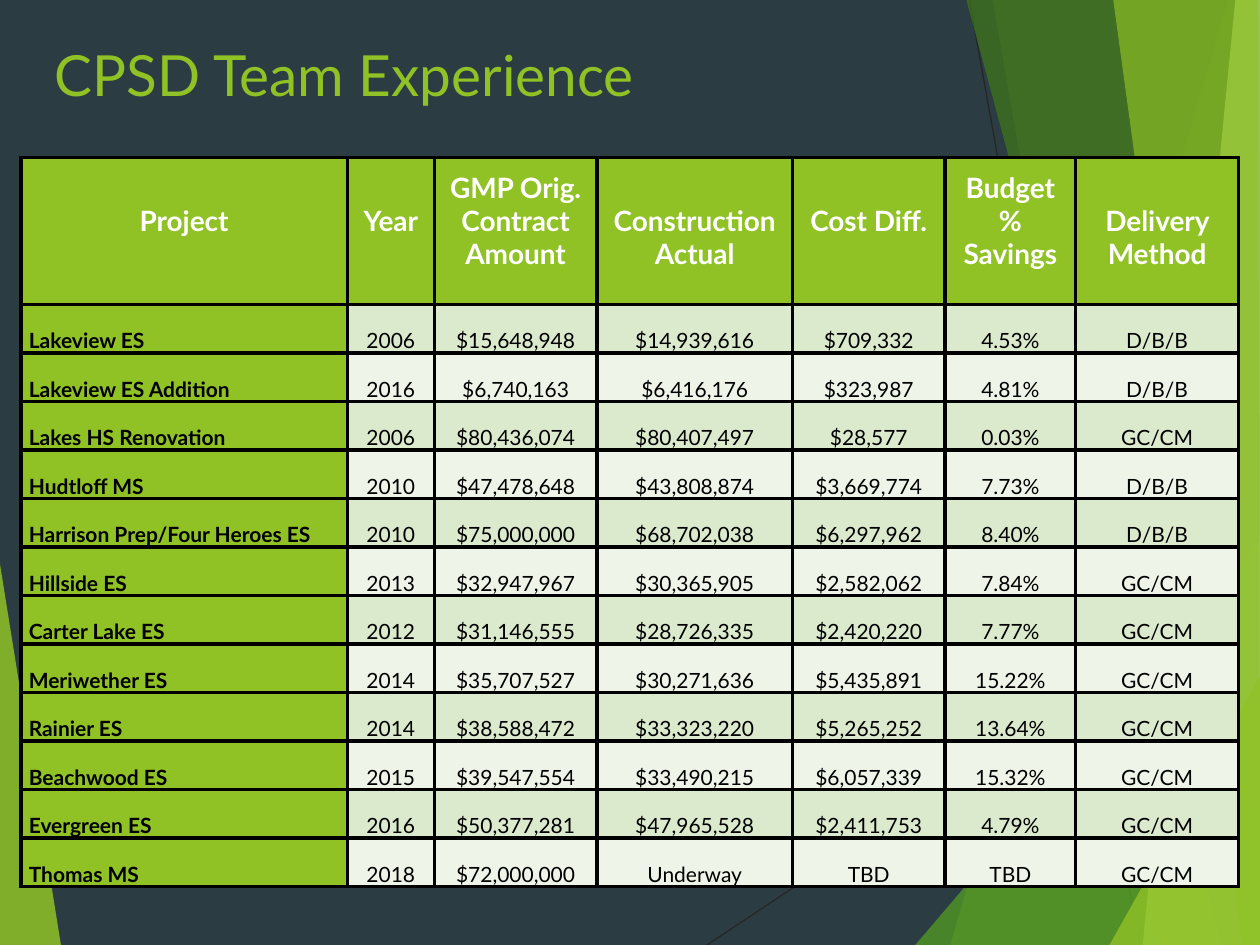
from typing import NamedTuple

from lxml.etree import SubElement
from pptx import Presentation
from pptx.dml.color import RGBColor
from pptx.enum.shapes import MSO_CONNECTOR
from pptx.enum.text import MSO_ANCHOR, MSO_AUTO_SIZE, PP_ALIGN
from pptx.oxml.ns import qn
from pptx.util import Pt

FONT = "Lato"
NAVY = RGBColor(0x2C, 0x3C, 0x43)
GREEN = RGBColor(0x90, 0xC2, 0x26)
LEAF = RGBColor(0x54, 0xA0, 0x21)
FOREST = RGBColor(0x3F, 0x78, 0x19)
LIME = RGBColor(0xC0, 0xE4, 0x74)
CHARCOAL = RGBColor(0x26, 0x26, 0x26)
BLACK = RGBColor(0, 0, 0)
WHITE = RGBColor(0xFF, 0xFF, 0xFF)
BANDS = (RGBColor(0xDB, 0xE9, 0xCD), RGBColor(0xEE, 0xF4, 0xE8))


class Facet(NamedTuple):
    color: RGBColor
    opacity: int
    points: list[tuple[float, float]]


class Heading(NamedTuple):
    text: str
    width: float
    lines_below: int


class Project(NamedTuple):
    name: str
    year: str
    contract: str
    actual: str
    difference: str
    savings: str
    method: str


RAYS = [((404, 540), (721, 329)), ((554, 0), (651, 540))]
FACETS = [
    Facet(GREEN, 85, [(-1, 316), (35, 541), (-1, 540)]),
    Facet(GREEN, 30, [(702, 0), (543, 540), (721, 541), (721, 0)]),
    Facet(GREEN, 20, [(567, -1), (662, 540), (721, 540), (721, -1)]),
    Facet(LEAF, 72, [(523, 540), (720, 309), (721, 540)]),
    Facet(FOREST, 70, [(552, -1), (698, 540), (721, 540), (721, -1)]),
    Facet(LIME, 70, [(706, -1), (653, 540), (721, 540), (720, -1)]),
    Facet(GREEN, 65, [(636, -1), (710, 540), (720, 540), (719, -1)]),
    Facet(GREEN, 80, [(634, 540), (721, 385), (721, 540)]),
]
HEADINGS = [
    Heading("Project", 186.5, 2),
    Heading("Year", 49.7, 2),
    Heading("GMP Orig. Contract Amount", 93, 1),
    Heading("Construction Actual", 111.7, 1),
    Heading("Cost Diff.", 87.2, 2),
    Heading("Budget % Savings", 74.7, 1),
    Heading("Delivery Method", 93, 1),
]
PROJECTS = [
    Project("Lakeview ES", "2006", "$15,648,948", "$14,939,616", "$709,332", "4.53%", "D/B/B"),
    Project("Lakeview ES Addition", "2016", "$6,740,163", "$6,416,176", "$323,987", "4.81%", "D/B/B"),
    Project("Lakes HS Renovation", "2006", "$80,436,074", "$80,407,497", "$28,577", "0.03%", "GC/CM"),
    Project("Hudtloff MS", "2010", "$47,478,648", "$43,808,874", "$3,669,774", "7.73%", "D/B/B"),
    Project("Harrison Prep/Four Heroes ES", "2010", "$75,000,000", "$68,702,038", "$6,297,962", "8.40%", "D/B/B"),
    Project("Hillside ES", "2013", "$32,947,967", "$30,365,905", "$2,582,062", "7.84%", "GC/CM"),
    Project("Carter Lake ES", "2012", "$31,146,555", "$28,726,335", "$2,420,220", "7.77%", "GC/CM"),
    Project("Meriwether ES", "2014", "$35,707,527", "$30,271,636", "$5,435,891", "15.22%", "GC/CM"),
    Project("Rainier ES", "2014", "$38,588,472", "$33,323,220", "$5,265,252", "13.64%", "GC/CM"),
    Project("Beachwood ES", "2015", "$39,547,554", "$33,490,215", "$6,057,339", "15.32%", "GC/CM"),
    Project("Evergreen ES", "2016", "$50,377,281", "$47,965,528", "$2,411,753", "4.79%", "GC/CM"),
    Project("Thomas MS", "2018", "$72,000,000", "Underway", "TBD", "TBD", "GC/CM"),
]
HEADER_HEIGHT, ROW_HEIGHT = 84, 27.75
HEADER_SIZE, BODY_SIZE = 16, 12
HEADER_LINE = HEADER_SIZE * 1.2


def write(frame, text: str, *, size: float, color: RGBColor,
          bold: bool = False, align=PP_ALIGN.LEFT) -> None:
    para = frame.paragraphs[0]
    para.alignment = align
    span = para.add_run()
    span.text = text
    span.font.name = FONT
    span.font.size = Pt(size)
    span.font.bold = bold
    span.font.color.rgb = color


def draw_ray(page, start: tuple, end: tuple) -> None:
    ray = page.shapes.add_connector(MSO_CONNECTOR.STRAIGHT, *map(Pt, start + end))
    ray.line.color.rgb = CHARCOAL
    ray.line.width = Pt(0.75)
    SubElement(ray.element.spPr, qn("a:effectLst"))


def draw_facet(page, facet: Facet) -> None:
    first, *others = [(Pt(x), Pt(y)) for x, y in facet.points]
    builder = page.shapes.build_freeform(*first)
    builder.add_line_segments(others, close=True)
    shape = builder.convert_to_shape()
    shape.shadow.inherit = False
    shape.line.fill.background()
    shape.fill.solid()
    shape.fill.fore_color.rgb = facet.color
    tint = shape.element.spPr.find(qn("a:solidFill"))[0]
    SubElement(tint, qn("a:alpha"), val=str(facet.opacity * 1000))


def format_cell(cell, fill: RGBColor, bottom: float = 0) -> None:
    cell.vertical_anchor = MSO_ANCHOR.BOTTOM
    cell.margin_left = cell.margin_right = Pt(4.5)
    cell.margin_top, cell.margin_bottom = 0, Pt(bottom)
    # Borders come before the fill in the cell properties
    properties = cell._tc.get_or_add_tcPr()
    for side in ("lnL", "lnR", "lnT", "lnB"):
        border = SubElement(properties, qn(f"a:{side}"), w=str(Pt(2.25)))
        paint = SubElement(border, qn("a:solidFill"))
        SubElement(paint, qn("a:srgbClr"), val=str(BLACK))
    cell.fill.solid()
    cell.fill.fore_color.rgb = fill


def draw_table(page) -> None:
    width = sum(heading.width for heading in HEADINGS)
    height = HEADER_HEIGHT + ROW_HEIGHT * len(PROJECTS)
    table = page.shapes.add_table(len(PROJECTS) + 1, len(HEADINGS), Pt(12), Pt(90),
                                  Pt(width), Pt(height)).table
    table.horz_banding = False
    for row in table.rows:
        row.height = Pt(ROW_HEIGHT)
    table.rows[0].height = Pt(HEADER_HEIGHT)

    # Header row
    for column, heading in enumerate(HEADINGS):
        table.columns[column].width = Pt(heading.width)
        cell = table.cell(0, column)
        format_cell(cell, GREEN, bottom=heading.lines_below * HEADER_LINE)
        write(cell.text_frame, heading.text, size=HEADER_SIZE, color=WHITE,
              bold=True, align=PP_ALIGN.CENTER)

    # Project rows
    for index, project in enumerate(PROJECTS):
        for column, text in enumerate(project):
            is_name = column == 0
            cell = table.cell(index + 1, column)
            format_cell(cell, GREEN if is_name else BANDS[index % 2])
            write(cell.text_frame, text, size=BODY_SIZE, color=BLACK, bold=is_name,
                  align=PP_ALIGN.LEFT if is_name else PP_ALIGN.CENTER)


def draw_title(page) -> None:
    title = page.shapes.title
    title.left, title.top, title.width, title.height = map(Pt, (24, 18, 500, 48))
    frame = title.text_frame
    frame.word_wrap = True
    frame.auto_size = MSO_AUTO_SIZE.NONE
    frame.vertical_anchor = MSO_ANCHOR.MIDDLE
    write(frame, "CPSD Team Experience", size=32.4, color=GREEN)
    # Bring the title in front of the backdrop
    title.element.getparent().append(title.element)


def main() -> None:
    deck = Presentation()
    deck.slide_width, deck.slide_height = Pt(720), Pt(540)
    page = deck.slides.add_slide(deck.slide_layouts[5])
    page.background.fill.solid()
    page.background.fill.fore_color.rgb = NAVY

    # Backdrop
    for start, end in RAYS:
        draw_ray(page, start, end)
    for facet in FACETS:
        draw_facet(page, facet)

    # Content
    draw_title(page)
    draw_table(page)
    deck.save("out.pptx")


if __name__ == "__main__":
    main()
